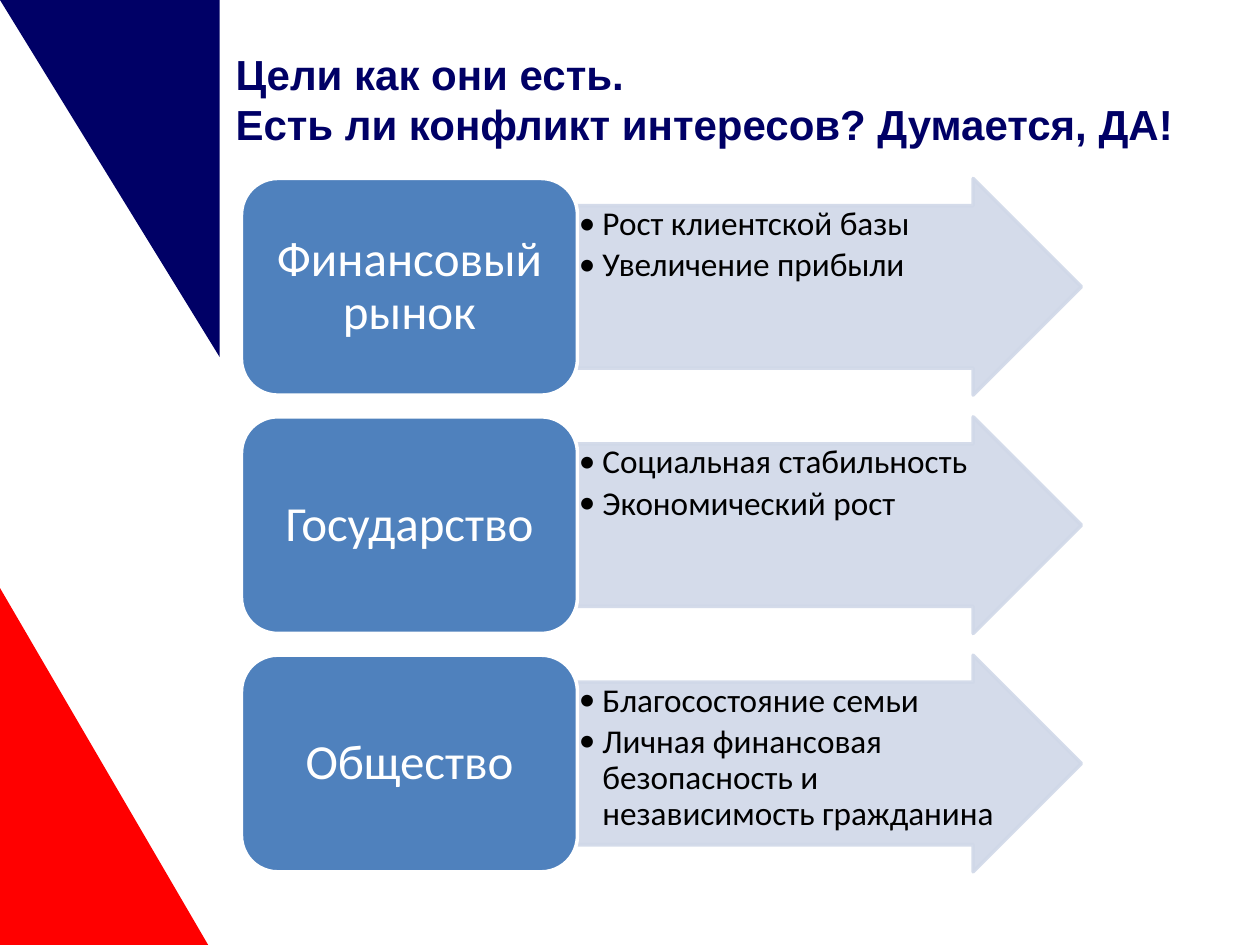
from dataclasses import dataclass

from lxml.etree import SubElement
from pptx import Presentation
from pptx.dml.color import RGBColor
from pptx.enum.shapes import MSO_SHAPE
from pptx.enum.text import MSO_ANCHOR, MSO_AUTO_SIZE, PP_ALIGN
from pptx.oxml.ns import qn
from pptx.util import Pt

# Content
TITLE = ["Цели как они есть.", "Есть ли конфликт интересов? Думается, ДА!"]
PARTIES = [
    ("Финансовый рынок", ["Рост клиентской базы", "Увеличение прибыли"]),
    ("Государство", ["Социальная стабильность", "Экономический рост"]),
    ("Общество", ["Благосостояние семьи",
                  "Личная финансовая безопасность и независимость гражданина"]),
]


@dataclass(frozen=True)
class Theme:
    navy: str = "000066"
    red: str = "FF0000"
    blue: str = "4F81BD"
    pale: str = "D0D8E8"
    white: str = "FFFFFF"
    black: str = "000000"
    title_font: str = "Arial"
    body_font: str = "Calibri"
    title_size: float = 24
    party_size: float = 28
    goal_size: float = 19


THEME = Theme()

# Layout, in points
SLIDE_WIDTH, SLIDE_HEIGHT = 720, 540
ROW_TOP, ROW_HEIGHT, ROW_GAP = 102, 123.8, 12.4
PARTY_LEFT, PARTY_WIDTH, ARROW_WIDTH = 138, 192, 288
GOAL_MARGIN, BULLET_INDENT = 0.8, 13.5
ARROW_OPACITY = 90


def add_filled_shape(slide, kind, left, top, width, height, fill, line=None):
    shape = slide.shapes.add_shape(kind, Pt(left), Pt(top), Pt(width), Pt(height))
    shape.shadow.inherit = False
    shape.fill.solid()
    shape.fill.fore_color.rgb = RGBColor.from_string(fill)
    if line:
        shape.line.color.rgb = RGBColor.from_string(line)
        shape.line.width = Pt(2)
    else:
        shape.line.fill.background()
    return shape


def set_frame(frame, anchor, side=0, end=0):
    frame.word_wrap = True
    frame.auto_size = MSO_AUTO_SIZE.NONE
    frame.vertical_anchor = anchor
    frame.margin_left = frame.margin_right = Pt(side)
    frame.margin_top = frame.margin_bottom = Pt(end)


def format_paragraph(paragraph, align, font, size, color, bold=False):
    paragraph.alignment = align
    for span in paragraph.runs:
        span.font.name = font
        span.font.size = Pt(size)
        span.font.bold = bold
        span.font.color.rgb = RGBColor.from_string(color)


def set_opacity(shape, percent):
    for color in shape.element.spPr.iter(qn("a:srgbClr")):
        SubElement(color, qn("a:alpha"), val=str(percent * 1000))


def add_bullet(paragraph):
    properties = paragraph._p.get_or_add_pPr()
    properties.set("marL", str(Pt(BULLET_INDENT)))
    properties.set("indent", str(-Pt(BULLET_INDENT)))
    SubElement(properties, qn("a:buFont"), typeface=THEME.body_font)
    SubElement(properties, qn("a:buChar"), char="•")


def add_goals_arrow(slide, top, goals):
    arrow = add_filled_shape(slide, MSO_SHAPE.RIGHT_ARROW, PARTY_LEFT + PARTY_WIDTH, top,
                             ARROW_WIDTH, ROW_HEIGHT, THEME.pale, THEME.pale)
    arrow.adjustments[0], arrow.adjustments[1] = 0.75, 0.5
    set_opacity(arrow, ARROW_OPACITY)
    frame = arrow.text_frame
    set_frame(frame, MSO_ANCHOR.TOP, side=GOAL_MARGIN, end=GOAL_MARGIN)
    frame.text = "\n".join(goals)
    for paragraph in frame.paragraphs:
        add_bullet(paragraph)
        paragraph.line_spacing = 0.9
        paragraph.space_after = Pt(3)
        format_paragraph(paragraph, PP_ALIGN.LEFT, THEME.body_font,
                         THEME.goal_size, THEME.black)


def add_party_box(slide, top, name):
    box = add_filled_shape(slide, MSO_SHAPE.ROUNDED_RECTANGLE, PARTY_LEFT, top,
                           PARTY_WIDTH, ROW_HEIGHT, THEME.blue, THEME.white)
    set_frame(box.text_frame, MSO_ANCHOR.MIDDLE, side=8.4, end=4.2)
    box.text_frame.text = name
    paragraph = box.text_frame.paragraphs[0]
    paragraph.line_spacing = 0.9
    format_paragraph(paragraph, PP_ALIGN.CENTER, THEME.body_font,
                     THEME.party_size, THEME.white)


def main():
    deck = Presentation()
    deck.slide_width, deck.slide_height = Pt(SLIDE_WIDTH), Pt(SLIDE_HEIGHT)
    slide = deck.slides.add_slide(deck.slide_layouts[5])

    # Corner triangles
    add_filled_shape(slide, MSO_SHAPE.RIGHT_TRIANGLE, 0, 336, 119, 204, THEME.red)
    corner = add_filled_shape(slide, MSO_SHAPE.RIGHT_TRIANGLE, 0, 0, 125.5, 204, THEME.navy)
    corner.rotation = 180

    # Title
    title = slide.shapes.title
    title.left, title.top, title.width, title.height = Pt(134.6), Pt(27.4), Pt(554), Pt(58.2)
    set_frame(title.text_frame, MSO_ANCHOR.MIDDLE)
    title.text_frame.text = "\n".join(TITLE)
    for paragraph in title.text_frame.paragraphs:
        format_paragraph(paragraph, PP_ALIGN.LEFT, THEME.title_font,
                         THEME.title_size, THEME.navy, bold=True)

    # One row per party: its goals arrow, then its name box
    for row, (name, goals) in enumerate(PARTIES):
        top = ROW_TOP + row * (ROW_HEIGHT + ROW_GAP)
        add_goals_arrow(slide, top, goals)
        add_party_box(slide, top, name)

    deck.save("out.pptx")


if __name__ == "__main__":
    main()
